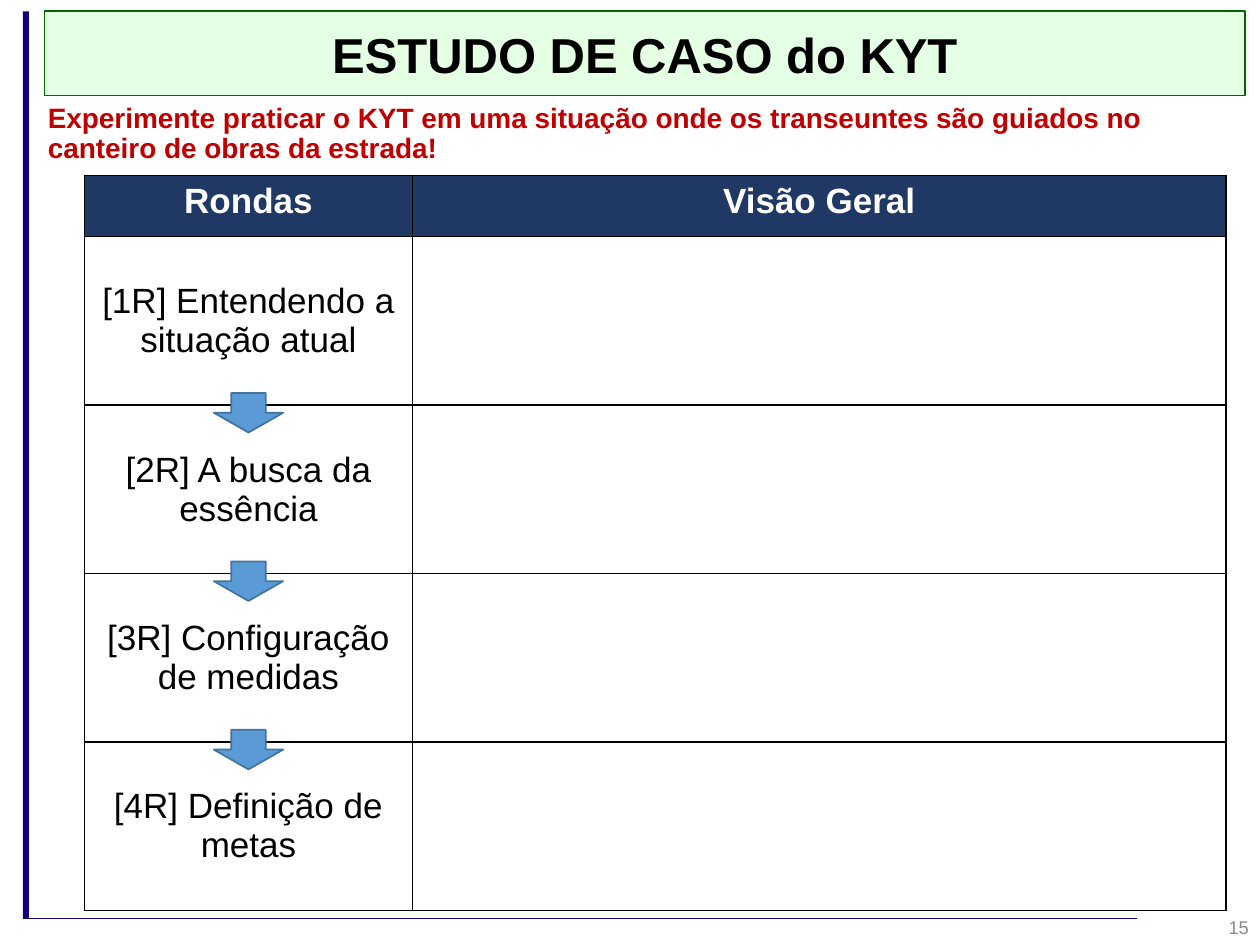
from lxml import etree
from pptx import Presentation
from pptx.dml.color import RGBColor
from pptx.enum import shapes, text
from pptx.oxml import ns, parse_xml
from pptx.util import Pt

BLACK, WHITE = "000000", "FFFFFF"
NAVY, INDIGO = "203864", "140078"
CENTER = text.PP_ALIGN.CENTER
MIDDLE = text.MSO_ANCHOR.MIDDLE


def color(value):
    return RGBColor.from_string(value)


def write(frame, words, size, ink, bold=False, align=CENTER):
    frame.text = words
    frame.word_wrap = True
    line = frame.paragraphs[0]
    line.alignment = align
    font = line.runs[0].font
    font.name, font.size, font.bold = "Arial", Pt(size), bold
    font.color.rgb = color(ink)


deck = Presentation()
deck.slide_width, deck.slide_height = Pt(720), Pt(540)
slide = deck.slides.add_slide(deck.slide_layouts[6])
items = slide.shapes

side_bar = items.add_shape(shapes.MSO_SHAPE.RECTANGLE, Pt(13), Pt(6.5), Pt(3.5), Pt(518.4))
side_bar.shadow.inherit = False
side_bar.fill.solid()
side_bar.fill.fore_color.rgb = color(INDIGO)
side_bar.line.fill.background()

footer_rule = items.add_connector(shapes.MSO_CONNECTOR.STRAIGHT, Pt(13), Pt(524.9), Pt(649.5), Pt(524.9))
footer_rule.line.color.rgb = color(INDIGO)
footer_rule.line.width = Pt(1)
etree.SubElement(footer_rule._element.spPr, ns.qn("a:effectLst"))

title = items.add_shape(shapes.MSO_SHAPE.RECTANGLE, Pt(25.4), Pt(6.5), Pt(686.2), Pt(48.2))
title.shadow.inherit = False
title.fill.solid()
title.fill.fore_color.rgb = color("CCFFCC")
tint = title._element.spPr.find(".//" + ns.qn("a:srgbClr"))
etree.SubElement(tint, ns.qn("a:alpha"), val="50000")
title.line.color.rgb = color("006600")
title.line.width = Pt(1)
title.text_frame.vertical_anchor = MIDDLE
write(title.text_frame, "ESTUDO DE CASO do KYT", 28, BLACK, True)

prompt = items.add_textbox(Pt(20.2), Pt(56.2), Pt(697), Pt(40))
write(
    prompt.text_frame,
    "Experimente praticar o KYT em uma situação onde os transeuntes são guiados no canteiro de obras da estrada!",
    16, "C00000", True, text.PP_ALIGN.LEFT,
)
prompt.text_frame.paragraphs[0].line_spacing = 0.9

header_height, round_height = 35, 96.25
table_left, table_top = 48.4, 100.3
column_widths = 187.2, 465.1
rows = [
    ("Rondas", "Visão Geral"),
    ("[1R] Entendendo a situação atual", ""),
    ("[2R] A busca da essência", ""),
    ("[3R] Configuração de medidas", ""),
    ("[4R] Definição de metas", ""),
]
rounds = items.add_table(
    len(rows), 2, Pt(table_left), Pt(table_top),
    Pt(sum(column_widths)), Pt(header_height + 4 * round_height),
).table
for column, width in zip(rounds.columns, column_widths):
    column.width = Pt(width)

for r, row in enumerate(rows):
    is_header = r == 0
    rounds.rows[r].height = Pt(header_height if is_header else round_height)
    for c, words in enumerate(row):
        cell = rounds.cell(r, c)
        if words:
            write(cell.text_frame, words, 20, WHITE if is_header else BLACK, is_header)
        if not is_header:
            cell.vertical_anchor = MIDDLE
        cell_properties = cell._tc.get_or_add_tcPr()
        for side in ("lnL", "lnR", "lnT", "lnB"):
            cell_properties.append(parse_xml(
                f'<a:{side} {ns.nsdecls("a")} w="12700"><a:solidFill>'
                f'<a:srgbClr val="{BLACK}"/></a:solidFill></a:{side}>'
            ))
        cell.fill.solid()
        cell.fill.fore_color.rgb = color(NAVY if is_header else WHITE)

arrow_width, arrow_height = 39.6, 22.6
arrow_left = table_left + (column_widths[0] - arrow_width) / 2
for step in range(1, 4):
    border = table_top + header_height + step * round_height
    arrow = items.add_shape(
        shapes.MSO_SHAPE.DOWN_ARROW,
        Pt(arrow_left), Pt(border - 7), Pt(arrow_width), Pt(arrow_height),
    )
    arrow.shadow.inherit = False
    arrow.fill.solid()
    arrow.fill.fore_color.rgb = color("5B9BD5")
    arrow.line.color.rgb = color("43739E")
    arrow.line.width = Pt(1)

page_number = items.add_textbox(Pt(558.7), Pt(515.5), Pt(162), Pt(28.8))
page_number.text_frame.vertical_anchor = MIDDLE
write(page_number.text_frame, "15", 10.5, "8C8C8C", align=text.PP_ALIGN.RIGHT)

deck.save("out.pptx")
